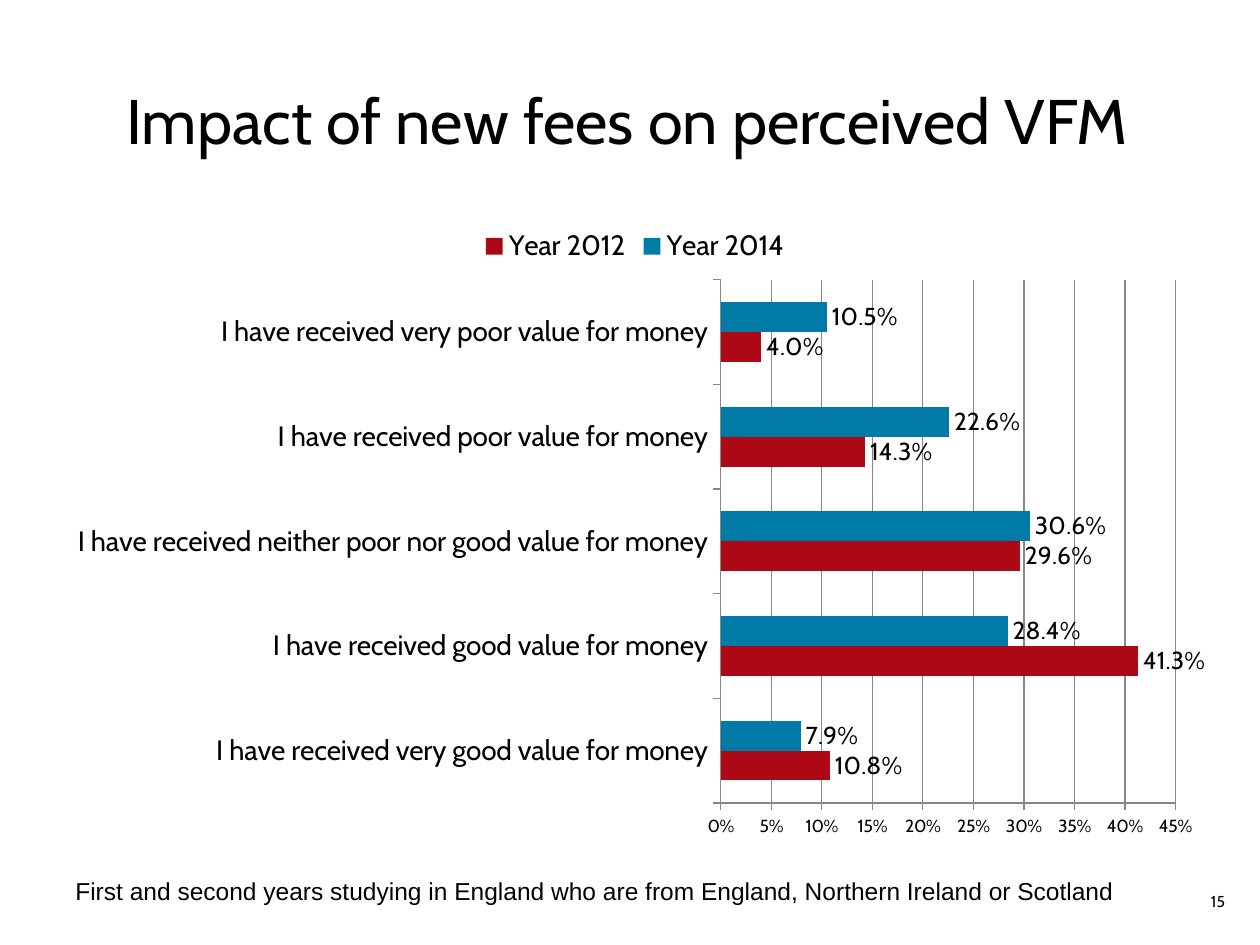
from dataclasses import dataclass

from lxml import etree
from pptx import Presentation
from pptx import util as u
from pptx.chart.data import CategoryChartData
from pptx.dml.color import RGBColor
from pptx.enum import chart as ch
from pptx.enum import text as tx
from pptx.oxml.ns import qn


@dataclass(frozen=True)
class Theme:
    font: str = "Cabin"
    plain: str = "Arial"
    ink: str = "000000"
    grid: str = "878787"
    blue: str = "007AA6"
    red: str = "AD0816"
    title: int = 36
    label: int = 16
    value: int = 14
    tick: int = 10
    page: int = 9


THEME = Theme()
SCALE = 914400 / 126
CATS = [
    f"I have received {grade} value for money"
    for grade in ("very poor", "poor", "neither poor nor good", "good", "very good")
]
SERIES = [
    ("Year 2014", (0.105, 0.226, 0.306, 0.284, 0.079), THEME.blue),
    ("Year 2012", (0.04, 0.143, 0.296, 0.413, 0.108), THEME.red),
]
CHART = (55, 215, 1160, 635)
PLOT = (721, 280, 455, 523)


def px(n):
    return u.Emu(round(n * SCALE))


def style(font, size, face=THEME.font):
    font.size = u.Pt(size)
    font.name = face
    font.bold = False
    font.color.rgb = RGBColor.from_string(THEME.ink)


def add_text(slide, box, words, size, face=THEME.font,
             anchor=tx.MSO_ANCHOR.TOP, align=tx.PP_ALIGN.LEFT, right=13):
    frame = slide.shapes.add_textbox(*map(px, box)).text_frame
    frame.word_wrap = True
    frame.vertical_anchor = anchor
    frame.margin_right = px(right)
    frame.text = words
    line = frame.paragraphs[0]
    line.alignment = align
    style(line.runs[0].font, size, face)


def place_plot(chart):
    area = chart._chartSpace.chart.plotArea
    for old in area.findall(qn("c:layout")):
        area.remove(old)
    layout = etree.Element(qn("c:layout"))
    area.insert(0, layout)
    manual = etree.SubElement(layout, qn("c:manualLayout"))
    left, top, width, height = CHART
    x, y, w, h = PLOT
    rules = [
        ("layoutTarget", "inner"), ("xMode", "edge"), ("yMode", "edge"),
        ("x", round((x - left) / width, 3)), ("y", round((y - top) / height, 3)),
        ("w", round(w / width, 3)), ("h", round(h / height, 3)),
    ]
    for tag, val in rules:
        etree.SubElement(manual, qn(f"c:{tag}")).set("val", str(val))


def set_line(line):
    line.width = u.Pt(0.75)
    line.color.rgb = RGBColor.from_string(THEME.grid)


def set_axes(chart):
    cat, val = chart.category_axis, chart.value_axis
    for axis, size in ((cat, THEME.label), (val, THEME.tick)):
        axis.major_tick_mark = ch.XL_TICK_MARK.OUTSIDE
        axis.minor_tick_mark = ch.XL_TICK_MARK.NONE
        style(axis.tick_labels.font, size)
        set_line(axis.format.line)
    cat.reverse_order = True
    cat.has_major_gridlines = False
    val._element.find(qn("c:crosses")).set("val", "max")
    val.minimum_scale, val.maximum_scale, val.major_unit = 0, 0.45, 0.05
    val.has_major_gridlines = True
    set_line(val.major_gridlines.format.line)
    val.tick_labels.number_format = "0%"
    val.tick_labels.number_format_is_linked = False


def set_bars(plot):
    plot.gap_width = 150
    plot.overlap = 0
    plot.vary_by_categories = False
    for bar, (_, _, color) in zip(plot.series, SERIES):
        bar.invert_if_negative = False
        bar.format.fill.solid()
        bar.format.fill.fore_color.rgb = RGBColor.from_string(color)
        tags = bar.data_labels
        tags.show_value = True
        tags.number_format = "###0.0%"
        tags.number_format_is_linked = False
        tags.position = ch.XL_LABEL_POSITION.OUTSIDE_END
        style(tags.font, THEME.value)


def add_bars(slide):
    data = CategoryChartData()
    data.categories = CATS
    for name, vals, _ in SERIES:
        data.add_series(name, vals)
    chart = slide.shapes.add_chart(
        ch.XL_CHART_TYPE.BAR_CLUSTERED, *map(px, CHART), data).chart
    style(chart.font, THEME.tick)
    chart.has_title = False
    chart.has_legend = True
    chart.legend.position = ch.XL_LEGEND_POSITION.TOP
    chart.legend.include_in_layout = False
    style(chart.legend.font, THEME.label)
    set_axes(chart)
    set_bars(chart.plots[0])
    place_plot(chart)


def main():
    deck = Presentation()
    deck.slide_width, deck.slide_height = px(1260), px(945)
    slide = deck.slides.add_slide(deck.slide_layouts[6])
    add_text(slide, (1166, 876, 59, 50), "15", THEME.page,
             anchor=tx.MSO_ANCHOR.MIDDLE, align=tx.PP_ALIGN.RIGHT, right=0)
    add_text(slide, (114, 66, 1131, 97), "Impact of new fees on perceived VFM",
             THEME.title, anchor=tx.MSO_ANCHOR.BOTTOM)
    add_bars(slide)
    add_text(slide, (63, 870, 1111, 43),
             "First and second years studying in England who are from England, "
             "Northern Ireland or Scotland", THEME.value, THEME.plain)
    deck.save("out.pptx")


if __name__ == "__main__":
    main()
